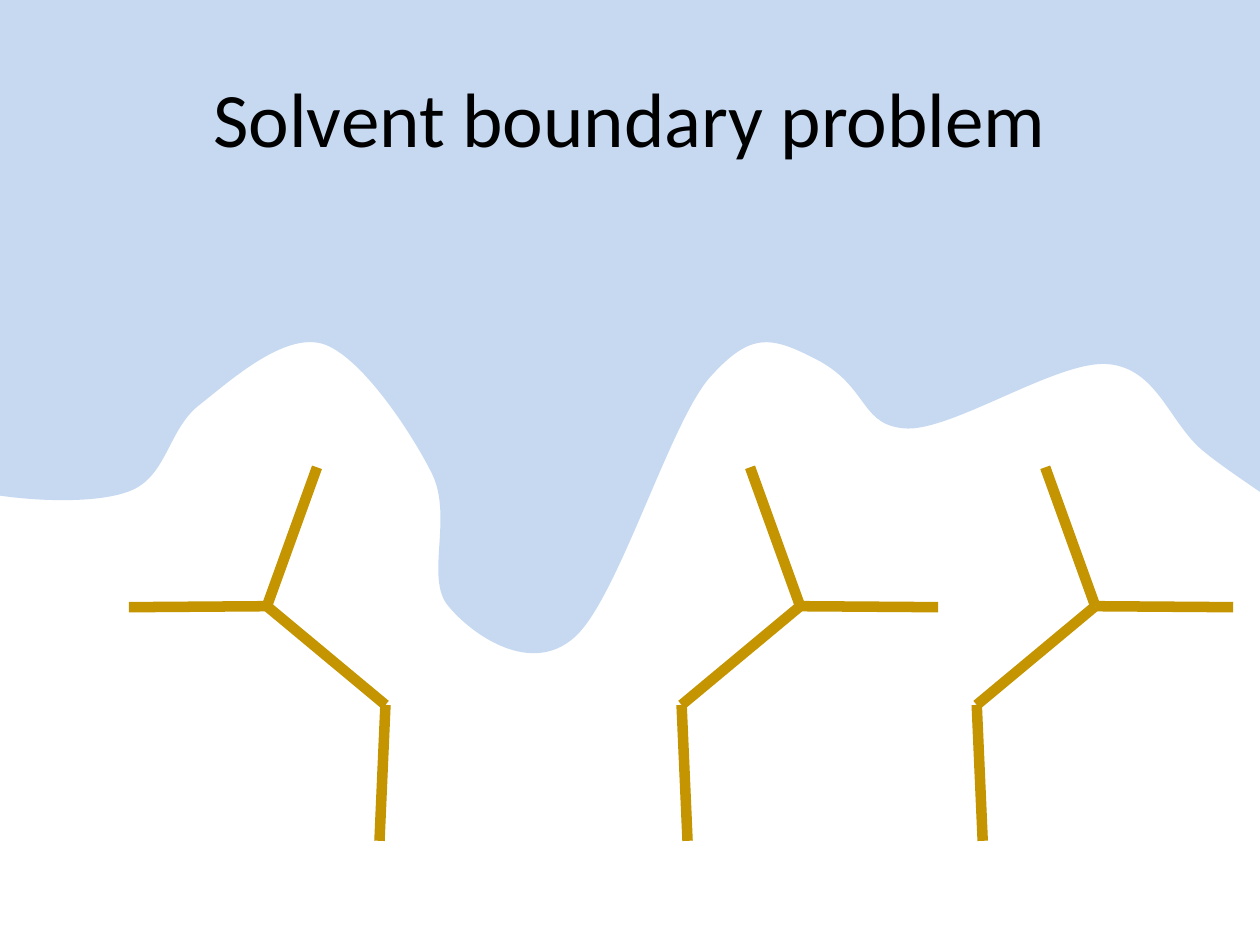
from lxml import etree
from pptx import Presentation
from pptx.dml.color import RGBColor
from pptx.enum.shapes import MSO_CONNECTOR
from pptx.enum.text import MSO_ANCHOR, PP_ALIGN
from pptx.oxml.ns import qn
from pptx.util import Cm, Pt

COLORS = {"solvent": "C6D9F1", "bond": "C49500", "text": "000000"}

# Cubic curves in cm: two control points and an end point each.
SOLVENT_CORNER = (-0.81, -1.5)
SOLVENT_START = (-0.81, 9.83)
SOLVENT_CURVES = [
    ((0.08, 10.08), (1.78, 10.21), (2.59, 9.91)),
    ((3.38, 9.63), (3.38, 8.64), (4.04, 8.15)),
    ((4.67, 7.65), (5.72, 6.71), (6.5, 6.93)),
    ((7.26, 7.16), (8.28, 8.69), (8.71, 9.55)),
    ((9.14, 10.44), (8.56, 11.66), (9.04, 12.22)),
    ((9.5, 12.78), (10.69, 13.64), (11.58, 12.85)),
    ((12.45, 12.09), (13.49, 8.56), (14.3, 7.62)),
    ((15.14, 6.68), (15.54, 6.76), (16.54, 7.29)),
    ((17.53, 7.85), (17.35, 8.61), (18.31, 8.64)),
    ((19.28, 8.64), (21.34, 7.26), (22.33, 7.34)),
    ((23.32, 7.42), (23.57, 8.51), (24.23, 9.07)),
    ((24.89, 9.63), (26.7, 10.72), (26.37, 10.69)),
    ((24.79, 10.44), (27.31, -0.36), (25.73, -0.61)),
    ((24.64, -2.62), (23.93, -0.61), (19.56, -0.56)),
    ((15.16, -0.51), (2.82, -1.65), (-0.56, -0.28)),
]

# Side chain atoms in cm from the corner of the molecule's box.
MOLECULE_WIDTH = 5.18
ROOT, BEND, CENTER = (5.06, 7.53), (5.18, 4.79), (2.79, 2.8)
UPPER_TIP, SIDE_TIP = (3.8, 0), (0.01, 2.82)
BONDS = [(ROOT, BEND), (CENTER, BEND), (CENTER, UPPER_TIP), (CENTER, SIDE_TIP)]


def rgb(name):
    return RGBColor.from_string(COLORS[name])


def add_path_step(path, tag, *points):
    """Append a drawing command whose points are measured from the shape's corner."""
    step = etree.SubElement(path, qn(tag))
    for x, y in points:
        etree.SubElement(step, qn("a:pt"),
                         x=str(Cm(x - SOLVENT_CORNER[0])),
                         y=str(Cm(y - SOLVENT_CORNER[1])))


def add_solvent(slide, left, top, width, height):
    builder = slide.shapes.build_freeform(Cm(left), Cm(top))
    builder.add_line_segments([(Cm(left + width), Cm(top + height))])
    shape = builder.convert_to_shape()

    path = shape._element.spPr.find(".//" + qn("a:path"))
    for step in list(path):
        path.remove(step)
    add_path_step(path, "a:moveTo", SOLVENT_START)
    for curve in SOLVENT_CURVES:
        add_path_step(path, "a:cubicBezTo", *curve)
    add_path_step(path, "a:lnTo", SOLVENT_START)
    add_path_step(path, "a:close")

    shape.shadow.inherit = False
    shape.fill.solid()
    shape.fill.fore_color.rgb = rgb("solvent")
    shape.line.fill.background()


def add_title(slide, left, top, width, height, text):
    box = slide.shapes.add_textbox(Cm(left), Cm(top), Cm(width), Cm(height))
    frame = box.text_frame
    frame.word_wrap = True
    frame.vertical_anchor = MSO_ANCHOR.MIDDLE
    paragraph = frame.paragraphs[0]
    paragraph.text = text
    paragraph.alignment = PP_ALIGN.CENTER
    paragraph.font.name = "Calibri"
    paragraph.font.size = Pt(44)
    paragraph.font.color.rgb = rgb("text")


def add_molecule(slide, left, top, mirrored):
    """Draw the bonds of one side chain as a group."""
    def place(atom):
        x = MOLECULE_WIDTH - atom[0] if mirrored else atom[0]
        return Cm(left + x), Cm(top + atom[1])

    group = slide.shapes.add_group_shape()
    for begin, end in BONDS:
        bond = group.shapes.add_connector(
            MSO_CONNECTOR.STRAIGHT, *place(begin), *place(end))
        bond.line.color.rgb = rgb("bond")
        bond.line.width = Pt(6)
        etree.SubElement(bond._element.spPr, qn("a:effectLst"))


def main():
    presentation = Presentation()
    presentation.slide_width, presentation.slide_height = Cm(25.4), Cm(19.05)
    slide = presentation.slides.add_slide(presentation.slide_layouts[6])
    add_solvent(slide, *SOLVENT_CORNER, 27.2, 14.68)
    add_title(slide, 1.27, 0.76, 22.86, 3.18, "Solvent boundary problem")
    for left, mirrored in ((2.59, False), (19.69, True), (13.74, True)):
        add_molecule(slide, left, 9.42, mirrored)
    presentation.save("out.pptx")


if __name__ == "__main__":
    main()
